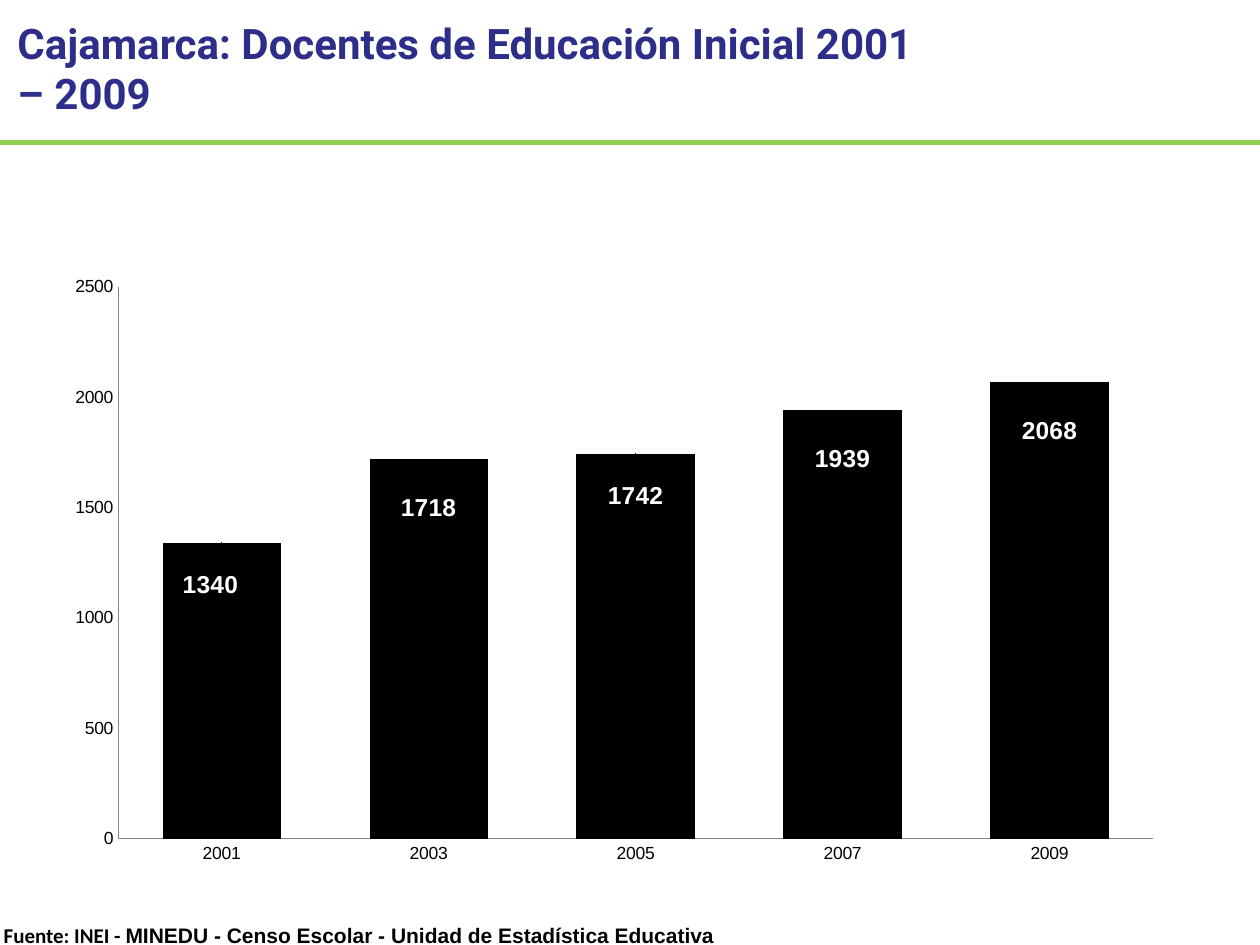
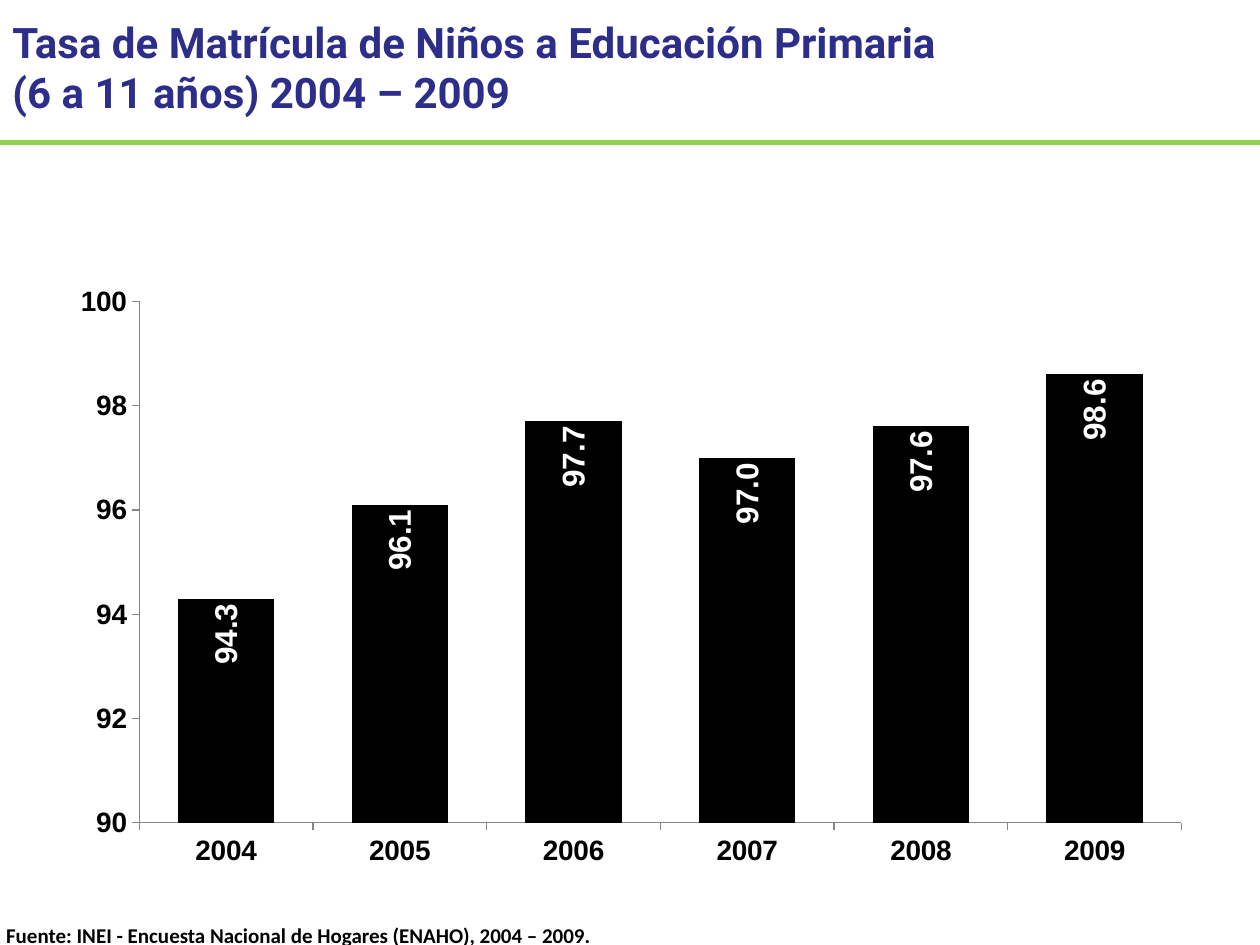
from dataclasses import dataclass
from typing import Optional

from pptx import Presentation
from pptx.chart.axis import _BaseAxis as Axis
from pptx.chart.chart import Chart
from pptx.chart.data import CategoryChartData
from pptx.dml.color import RGBColor
from pptx.enum.chart import XL_CHART_TYPE as ChartType
from pptx.enum.chart import XL_LABEL_POSITION as LabelPosition
from pptx.enum.chart import XL_TICK_MARK as TickMark
from pptx.enum.shapes import MSO_CONNECTOR as Connector
from pptx.enum.text import MSO_ANCHOR as Anchor
from pptx.oxml import parse_xml
from pptx.oxml.ns import nsdecls
from pptx.slide import Slide
from pptx.text.text import Font
from pptx.util import Pt


# Shared look
@dataclass(frozen=True)
class Theme:
    title: RGBColor = RGBColor(0x2D, 0x2D, 0x8A)
    rule: RGBColor = RGBColor(0x92, 0xD0, 0x50)
    ink: RGBColor = RGBColor(0, 0, 0)
    value: RGBColor = RGBColor(0xFF, 0xFF, 0xFF)
    axis: RGBColor = RGBColor(0x86, 0x86, 0x86)
    title_font: str = "Roboto"
    source_font: str = "Calibri"
    body_font: str = "Arial"
    title_size: float = 24
    source_size: float = 12


THEME = Theme()
SLIDE_WIDTH, SLIDE_HEIGHT = 720, 540
RULE_TOP = 81.4


@dataclass(frozen=True)
class Box:
    left: float
    top: float
    width: float
    height: float

    def lengths(self) -> tuple[Pt, ...]:
        return Pt(self.left), Pt(self.top), Pt(self.width), Pt(self.height)


@dataclass(frozen=True)
class Columns:
    box: Box
    kind: ChartType
    values: dict[str, float]
    scale: tuple[float, float, float]  # minimum, maximum, step
    gap: int
    tick: TickMark
    axis_size: float
    axis_bold: bool
    value_size: float
    value_format: str
    value_position: LabelPosition
    value_shifts: tuple[tuple[float, float], ...] = ()
    upright_values: bool = False
    plot_area: Optional[Box] = None  # fractions of the chart


@dataclass(frozen=True)
class Page:
    title: str
    title_box: Box
    source: tuple[tuple[str, str], ...]  # text and font
    source_left: float
    columns: Columns


def style(font: Font, name: str, size: float, color: RGBColor, bold: bool = True) -> None:
    font.name, font.size, font.bold = name, Pt(size), bold
    font.color.rgb = color


# Title, rule and source line
def add_title(slide: Slide, page: Page) -> None:
    frame = slide.shapes.add_textbox(*page.title_box.lengths()).text_frame
    frame.word_wrap, frame.vertical_anchor = True, Anchor.TOP
    frame.text = page.title
    for line in frame.paragraphs:
        style(line.runs[0].font, THEME.title_font, THEME.title_size, THEME.title)


def add_rule(slide: Slide) -> None:
    rule = slide.shapes.add_connector(
        Connector.STRAIGHT, Pt(0), Pt(RULE_TOP), Pt(SLIDE_WIDTH), Pt(RULE_TOP))
    rule.line.color.rgb, rule.line.width = THEME.rule, Pt(3)
    rule._element.spPr.append(parse_xml(f"<a:effectLst {nsdecls('a')}/>"))


def add_source(slide: Slide, page: Page) -> None:
    box = Box(page.source_left, 523.4, 625, 21.6)
    frame = slide.shapes.add_textbox(*box.lengths()).text_frame
    frame.word_wrap = True
    for text, font_name in page.source:
        part = frame.paragraphs[0].add_run()
        part.text = text
        style(part.font, font_name, THEME.source_size, THEME.ink)


# Column charts
def manual_layout(settings: dict[str, object]) -> object:
    items = "".join(f'<c:{tag} val="{value}"/>' for tag, value in settings.items())
    return parse_xml(
        f"<c:layout {nsdecls('c')}><c:manualLayout>{items}</c:manualLayout></c:layout>")


def style_axis(axis: Axis, columns: Columns) -> None:
    axis.has_major_gridlines = False
    axis.major_tick_mark, axis.minor_tick_mark = columns.tick, TickMark.NONE
    axis.format.line.color.rgb, axis.format.line.width = THEME.axis, Pt(0.75)
    style(axis.tick_labels.font, THEME.body_font, columns.axis_size, THEME.ink,
          columns.axis_bold)


def label_values(chart: Chart, columns: Columns) -> None:
    series = chart.plots[0].series[0]
    labels = series.data_labels
    labels.show_value, labels.position = True, columns.value_position
    labels.number_format, labels.number_format_is_linked = columns.value_format, False
    style(labels.font, THEME.body_font, columns.value_size, THEME.value)
    if columns.upright_values:
        for body in series._element.xpath("./c:dLbls/c:txPr/a:bodyPr"):
            body.set("rot", "-5400000")
            body.set("vert", "horz")
    for index in range(len(columns.value_shifts)):
        label = series.points[index].data_label
        style(label.font, THEME.body_font, columns.value_size, THEME.value)
        label.position = columns.value_position
    shifted = series._element.xpath("./c:dLbls/c:dLbl")
    for label_xml, (across, down) in zip(shifted, columns.value_shifts):
        label_xml.insert(1, manual_layout({"x": across, "y": down}))


def add_columns(slide: Slide, columns: Columns) -> None:
    data = CategoryChartData()
    data.categories = list(columns.values)
    data.add_series("Series 1", list(columns.values.values()))
    chart = slide.shapes.add_chart(columns.kind, *columns.box.lengths(), data).chart
    chart.has_legend = chart.has_title = False
    style(chart.font, THEME.body_font, columns.axis_size, THEME.ink, False)

    plot = chart.plots[0]
    plot.gap_width, plot.vary_by_categories = columns.gap, False
    if columns.kind == ChartType.COLUMN_STACKED:
        plot.overlap = 100
    fill = plot.series[0].format.fill
    fill.solid()
    fill.fore_color.rgb = THEME.ink

    for axis in (chart.category_axis, chart.value_axis):
        style_axis(axis, columns)
    scale = chart.value_axis
    scale.minimum_scale, scale.maximum_scale, scale.major_unit = columns.scale
    scale.tick_labels.number_format = "0"
    scale.tick_labels.number_format_is_linked = False
    label_values(chart, columns)

    if columns.plot_area:
        area, inner = chart._chartSpace.chart.plotArea, columns.plot_area
        for automatic in area.xpath("./c:layout"):
            area.remove(automatic)
        area.insert(0, manual_layout({
            "layoutTarget": "inner", "xMode": "edge", "yMode": "edge",
            "x": inner.left, "y": inner.top, "w": inner.width, "h": inner.height}))


# Content
PAGES = (
    Page(
        title="Cajamarca: Docentes de Educación Inicial 2001 – 2009",
        title_box=Box(2.9, 6.5, 527, 64.8),
        source=(("Fuente: INEI - ", THEME.source_font),
                ("MINEDU - Censo Escolar - Unidad de Estadística Educativa",
                 THEME.body_font)),
        source_left=-5,
        columns=Columns(
            box=Box(30.2, 151.2, 641.5, 349.2),
            kind=ChartType.COLUMN_CLUSTERED,
            values={"2001": 1340, "2003": 1718, "2005": 1742, "2007": 1939, "2009": 2068},
            scale=(0, 2500, 500), gap=75, tick=TickMark.NONE,
            axis_size=10, axis_bold=False,
            value_size=14, value_format="0",
            value_position=LabelPosition.OUTSIDE_END,
            value_shifts=((-0.01, 0.1), (0, 0.11), (0, 0.1), (0, 0.11), (0, 0.11)),
        ),
    ),
    Page(
        title="Tasa de Matrícula de Niños a Educación Primaria\n(6 a 11 años) 2004 – 2009",
        title_box=Box(0, 5.8, 591, 93.6),
        source=(("Fuente: INEI - Encuesta Nacional de Hogares (ENAHO), 2004 – 2009.",
                 THEME.source_font),),
        source_left=-3.6,
        columns=Columns(
            box=Box(33.8, 151.2, 654.5, 350.6),
            kind=ChartType.COLUMN_STACKED,
            values={"2004": 94.3, "2005": 96.1, "2006": 97.7,
                    "2007": 97, "2008": 97.6, "2009": 98.6},
            scale=(90, 100, 2), gap=80, tick=TickMark.OUTSIDE,
            axis_size=16, axis_bold=True,
            value_size=18, value_format="#,##0.0",
            value_position=LabelPosition.INSIDE_END,
            upright_values=True,
            plot_area=Box(0.07, 0.06, 0.91, 0.85),
        ),
    ),
)


def main() -> None:
    deck = Presentation()
    deck.slide_width, deck.slide_height = Pt(SLIDE_WIDTH), Pt(SLIDE_HEIGHT)
    for page in PAGES:
        slide = deck.slides.add_slide(deck.slide_layouts[6])
        add_columns(slide, page.columns)
        add_source(slide, page)
        add_title(slide, page)
        add_rule(slide)
    deck.save("out.pptx")


if __name__ == "__main__":
    main()
